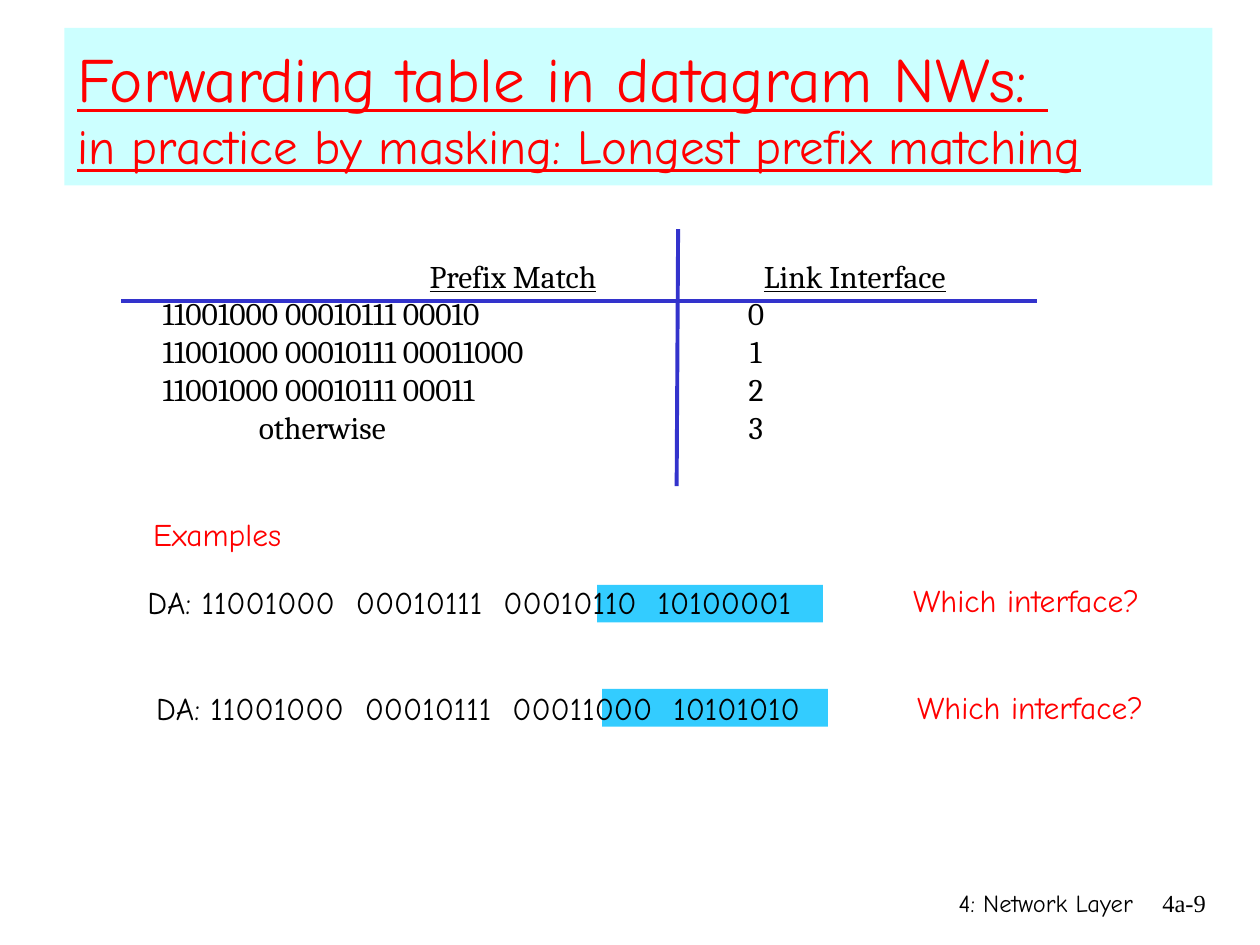
from pptx import Presentation
from pptx.dml.color import RGBColor
from pptx.enum.shapes import MSO_CONNECTOR, MSO_SHAPE
from pptx.enum.text import MSO_ANCHOR, MSO_AUTO_SIZE, PP_ALIGN
from pptx.oxml.ns import qn
from pptx.util import Cm, Pt
from lxml.etree import SubElement

BLACK, RED, BLUE = "000000", "FF0000", "3333CC"
PALE_CYAN, SKY_BLUE = "CCFFFF", "33CCFF"
HAND, SERIF, NUMBER_FONT = "Comic Neue", "Cambria", "Times New Roman"


def color(value):
    return RGBColor.from_string(value)


class SlideBuilder:
    """Hold the text style and current slide, and add its elements."""

    def __init__(self, slide, font=HAND, size=18):
        self.slide = slide
        self.font = font
        self.size = size

    def run(self, paragraph, text, fill=BLACK, size=None, font=None, underline=False):
        run = paragraph.add_run()
        run.text = text
        run.font.name = font or self.font
        run.font.size = Pt(size or self.size)
        run.font.color.rgb = color(fill)
        run.font.underline = underline

    def title(self, left, top, width, height, heading, subheading):
        shape = self.slide.shapes.title
        shape.left, shape.top = Cm(left), Cm(top)
        shape.width, shape.height = Cm(width), Cm(height)
        shape.fill.solid()
        shape.fill.fore_color.rgb = color(PALE_CYAN)
        frame = shape.text_frame
        frame.auto_size = MSO_AUTO_SIZE.NONE
        frame.vertical_anchor = MSO_ANCHOR.MIDDLE
        paragraph = frame.paragraphs[0]
        paragraph.alignment = PP_ALIGN.LEFT
        self.run(paragraph, heading, RED, 36, underline=True)
        paragraph.add_line_break()
        self.run(paragraph, subheading, RED, 28, underline=True)

    def frame(self, left, top, width, height, wrap=True):
        box = self.slide.shapes.add_textbox(Cm(left), Cm(top), Cm(width), Cm(height))
        box.text_frame.word_wrap = wrap
        return box.text_frame

    def label(self, left, top, width, text, fill=BLACK):
        frame = self.frame(left, top, width, 1.02, wrap=False)
        self.run(frame.paragraphs[0], text, fill)

    def footer(self, left, width, text, font):
        paragraph = self.frame(left, 17.78, width, 1.27).paragraphs[0]
        paragraph.alignment = PP_ALIGN.RIGHT
        self.run(paragraph, text, size=14, font=font)

    def tabbed_rows(self, left, top, width, height, rows):
        frame = self.frame(left, top, width, height)
        for index, (cells, underline) in enumerate(rows):
            paragraph = frame.add_paragraph() if index else frame.paragraphs[0]
            tabs = SubElement(paragraph._p.get_or_add_pPr(), qn("a:tabLst"))
            for text, position, alignment in cells:
                SubElement(tabs, qn("a:tab"), pos=str(Cm(position)), algn=alignment)
                self.run(paragraph, "\t", font=SERIF)
                self.run(paragraph, text, font=SERIF, underline=underline)

    def rectangle(self, left, top, width, height, fill):
        shape = self.slide.shapes.add_shape(
            MSO_SHAPE.RECTANGLE, Cm(left), Cm(top), Cm(width), Cm(height))
        shape.shadow.inherit = False
        shape.fill.solid()
        shape.fill.fore_color.rgb = color(fill)
        shape.line.fill.background()

    def line(self, *ends):
        connector = self.slide.shapes.add_connector(
            MSO_CONNECTOR.STRAIGHT, *[Cm(end) for end in ends])
        connector.line.color.rgb = color(BLUE)
        connector.line.width = Pt(2.25)
        SubElement(connector._element.spPr, qn("a:effectLst"))


def main():
    presentation = Presentation()
    presentation.slide_width, presentation.slide_height = Cm(25.4), Cm(19.05)
    builder = SlideBuilder(presentation.slides.add_slide(presentation.slide_layouts[5]))

    builder.title(1.3, 0.56, 23.14, 3.18, "Forwarding table in datagram NWs: ",
                  "in practice by masking: Longest prefix matching")
    builder.footer(15.04, 8.05, "4: Network Layer", HAND)
    builder.footer(22.68, 1.88, "4a-9", NUMBER_FONT)

    prefixes = [
        ("11001000 00010111 00010", 1.4),
        ("11001000 00010111 00011000", 1.4),
        ("11001000 00010111 00011", 1.4),
        ("otherwise", 3.34),
    ]
    rows = [([("Prefix Match", 6.78, "l"), ("Link Interface", 13.52, "l")], True)]
    for interface, (prefix, position) in enumerate(prefixes):
        rows.append(([(prefix, position, "l"), (str(interface), 13.36, "ctr")], False))
    builder.tabbed_rows(1.63, 5.05, 18.16, 4.06, rows)
    builder.line(2.44, 6.07, 20.9, 6.07)
    builder.line(13.67, 4.62, 13.64, 9.8)

    builder.label(2.84, 10.26, 3.28, "Examples", RED)
    examples = [
        ("DA: 11001000  00010111  00010110  10100001", 2.72, 11.63, 12.04, 11.79, 18.16, 11.58),
        ("DA: 11001000  00010111  00011000  10101010", 2.9, 13.77, 12.14, 13.89, 18.24, 13.74),
    ]
    for address, left, top, mask_left, mask_top, question_left, question_top in examples:
        builder.rectangle(mask_left, mask_top, 4.55, 0.76, SKY_BLUE)
        builder.label(left, top, 14.25, address)
        builder.label(question_left, question_top, 5.72, "Which interface?", RED)

    presentation.save("out.pptx")


if __name__ == "__main__":
    main()
